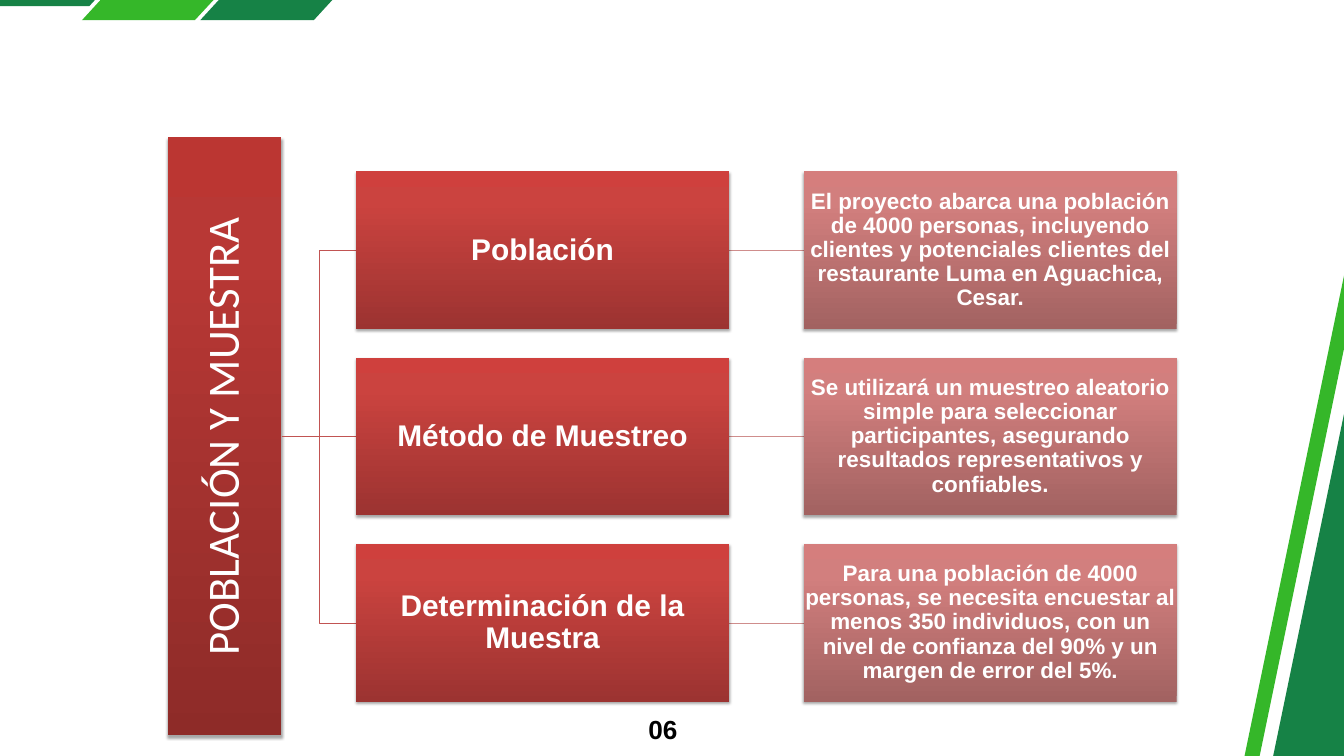
from dataclasses import dataclass

from lxml.etree import SubElement
from pptx import Presentation
from pptx.dml.color import RGBColor
from pptx.enum.shapes import MSO_CONNECTOR, MSO_SHAPE
from pptx.enum.text import MSO_ANCHOR, MSO_AUTO_SIZE, PP_ALIGN
from pptx.oxml.ns import qn
from pptx.util import Pt

PX = 9144
COLORS = {
    "dark_green": "168246",
    "light_green": "35B729",
    "white": "FFFFFF",
    "black": "000000",
    "branch": "C15452",
    "leaf": "CF8D8C",
}
GRADIENTS = {
    "root": ("8E2B28", "B83835", "BB3632"),
    "topic": ("9C3331", "CB433F", "CF403D"),
    "detail": ("A26261", "D27F7E", "D57E7D"),
}
STOPS = (0, 80000, 100000)
BOX_WIDTH, BOX_HEIGHT = 555, 235
TOPIC_LEFT, DETAIL_LEFT = 530, 1196
FIRST_TOP, ROW_STEP = 255, 277
ROOT_RIGHT, ROOT_MIDDLE = 419, 650


@dataclass
class Band:
    points: list[tuple[int, int]]
    color: str
    rotation: float = 0


@dataclass
class Row:
    topic: str
    detail: str


BANDS = [
    Band([(-179, -83), (217, -83), (133, 9), (-263, 9)], "dark_green"),
    Band([(244, -103), (413, -103), (290, 30), (122, 30)], "light_green"),
    Band([(420, -103), (589, -103), (467, 30), (298, 30)], "dark_green"),
    Band([(1386, 535), (3027, 535), (3027, 1001), (1386, 1001)], "dark_green", 281.7),
    Band([(1126, 712), (2767, 712), (2767, 734), (1126, 734)], "light_green", 281.7),
]
ROWS = [
    Row(
        "Población",
        "El proyecto abarca una población de 4000 personas, incluyendo clientes y "
        "potenciales clientes del restaurante Luma en Aguachica, Cesar.",
    ),
    Row(
        "Método de Muestreo",
        "Se utilizará un muestreo aleatorio simple para seleccionar participantes, "
        "asegurando resultados representativos y confiables.",
    ),
    Row(
        "Determinación de la Muestra",
        "Para una población de 4000 personas, se necesita encuestar al menos 350 "
        "individuos, con un nivel de confianza del 90% y un margen de error del 5%.",
    ),
]


def rgb(name: str) -> RGBColor:
    return RGBColor.from_string(COLORS[name])


def write_text(shape, text: str, *, size: int, font: str = "Arial",
               color: str = "white", bold: bool = True, align=PP_ALIGN.CENTER,
               anchor=MSO_ANCHOR.MIDDLE, spacing=0.9, margin: int = 2,
               auto_size=MSO_AUTO_SIZE.NONE) -> None:
    frame = shape.text_frame
    frame.word_wrap = True
    frame.auto_size = auto_size
    frame.vertical_anchor = anchor
    frame.margin_left = frame.margin_right = margin * PX
    frame.margin_top = frame.margin_bottom = margin * PX
    para = frame.paragraphs[0]
    para.alignment = align
    para.line_spacing = spacing
    span = para.add_run()
    span.text = text
    span.font.name = font
    span.font.size = Pt(size)
    span.font.bold = bold
    span.font.color.rgb = rgb(color)


def paint_box(shape, gradient: str) -> None:
    shape.fill.gradient()
    shape.fill.gradient_angle = 90
    shape.line.fill.background()
    shape.shadow.inherit = False
    properties = shape._element.spPr
    fill = properties.find(qn("a:gradFill"))
    fill.set("rotWithShape", "0")
    stops = fill.find(qn("a:gsLst"))
    for stop in list(stops):
        stops.remove(stop)
    for position, value in zip(STOPS, GRADIENTS[gradient]):
        stop = SubElement(stops, qn("a:gs"), pos=str(position))
        SubElement(stop, qn("a:srgbClr"), val=value)
    effects = properties.find(qn("a:effectLst"))
    shadow = SubElement(effects, qn("a:outerShdw"), blurRad="40000", dist="23000",
                        dir="5400000", rotWithShape="0")
    shade = SubElement(shadow, qn("a:srgbClr"), val=COLORS["black"])
    SubElement(shade, qn("a:alpha"), val="35000")


def draw_band(page, band: Band) -> None:
    builder = page.shapes.build_freeform(*band.points[0], scale=PX)
    builder.add_line_segments(band.points[1:], close=True)
    shape = builder.convert_to_shape()
    shape.rotation = band.rotation
    shape.fill.solid()
    shape.fill.fore_color.rgb = rgb(band.color)
    shape.line.fill.background()
    shape.shadow.inherit = False


def draw_link(page, start: tuple[int, int], end: tuple[int, int], color: str) -> None:
    kind = MSO_CONNECTOR.STRAIGHT if start[1] == end[1] else MSO_CONNECTOR.ELBOW
    link = page.shapes.add_connector(kind, *(value * PX for value in start + end))
    link.line.color.rgb = rgb(color)
    link.line.width = Pt(0.75)
    SubElement(link._element.spPr, qn("a:effectLst"))


def draw_box(page, left: int, top: int, text: str, gradient: str, size: int) -> None:
    box = page.shapes.add_shape(MSO_SHAPE.RECTANGLE, left * PX, top * PX,
                                BOX_WIDTH * PX, BOX_HEIGHT * PX)
    paint_box(box, gradient)
    write_text(box, text, size=size)


def draw_row(page, row: Row, top: int) -> None:
    middle = top + BOX_HEIGHT // 2 + 1
    draw_link(page, (ROOT_RIGHT, ROOT_MIDDLE), (TOPIC_LEFT, middle), "branch")
    draw_link(page, (TOPIC_LEFT + BOX_WIDTH, middle), (DETAIL_LEFT, middle), "leaf")
    draw_box(page, TOPIC_LEFT, top, row.topic, "topic", 32)
    draw_box(page, DETAIL_LEFT, top, row.detail, "detail", 24)


def draw_title(page, text: str) -> None:
    title = page.shapes.title
    title.left, title.top = -111 * PX, 565 * PX
    title.width, title.height = 890 * PX, 169 * PX
    title.rotation = 270
    paint_box(title, "root")
    write_text(title, text, size=48, font="Calibri", bold=False, margin=3)


def draw_page_number(page, text: str) -> None:
    box = page.shapes.add_textbox(952 * PX, 1054 * PX, 56 * PX, 50 * PX)
    write_text(box, text, size=28, color="black", align=PP_ALIGN.RIGHT,
               anchor=MSO_ANCHOR.TOP, spacing=Pt(39.2), margin=0,
               auto_size=MSO_AUTO_SIZE.SHAPE_TO_FIT_TEXT)


def main() -> None:
    deck = Presentation()
    deck.slide_width, deck.slide_height = 2000 * PX, 1125 * PX
    page = deck.slides.add_slide(deck.slide_layouts[5])
    for band in BANDS:
        draw_band(page, band)
    draw_title(page, "POBLACIÓN Y MUESTRA")
    for index, row in enumerate(ROWS):
        draw_row(page, row, FIRST_TOP + index * ROW_STEP)
    draw_page_number(page, "06")
    deck.save("out.pptx")


if __name__ == "__main__":
    main()
